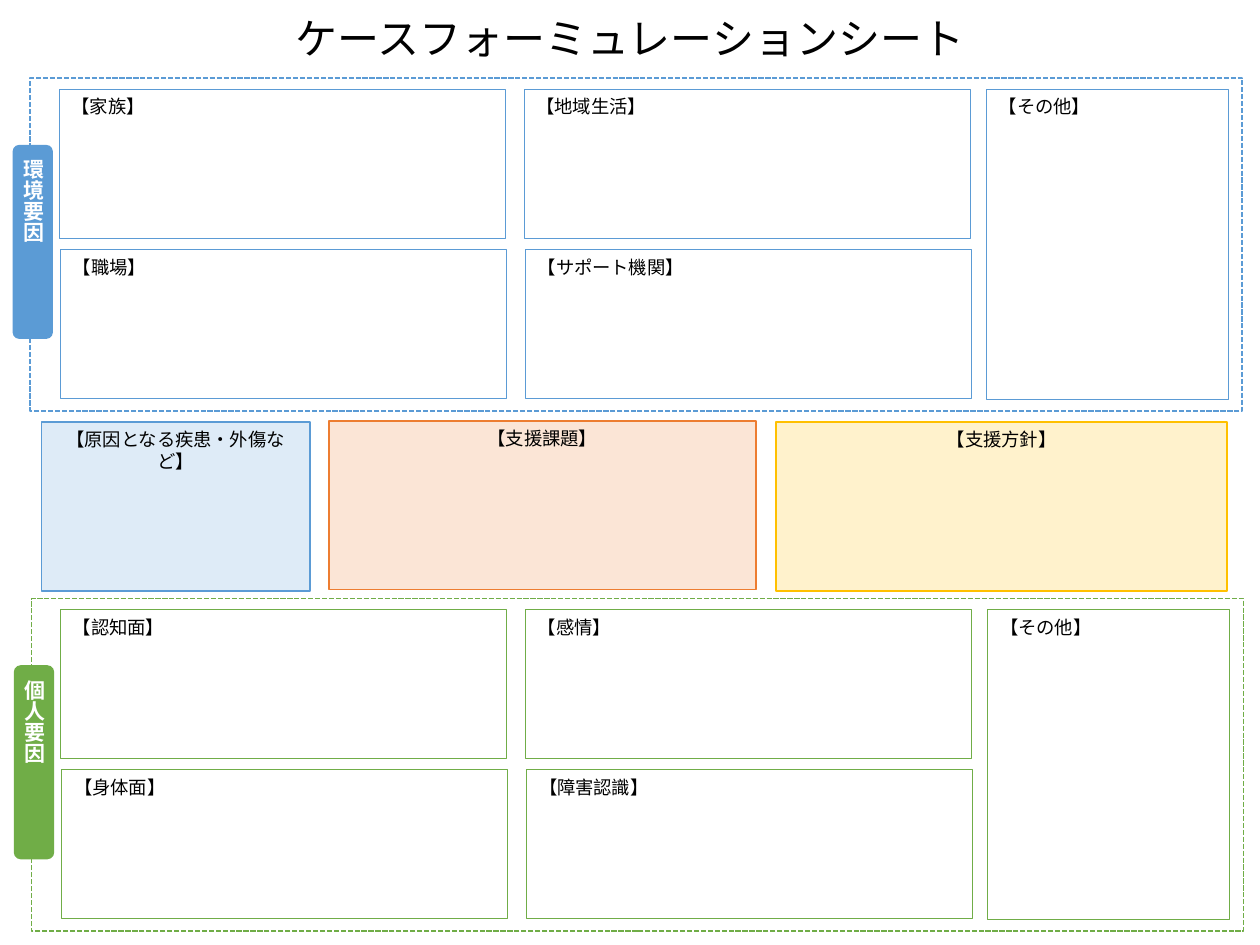
from pptx import Presentation
from pptx.dml.color import RGBColor
from pptx.enum.dml import MSO_LINE
from pptx.enum.shapes import MSO_SHAPE
from pptx.enum.text import MSO_ANCHOR, PP_ALIGN
from pptx.util import Inches, Pt

COLORS = {
    "black": "000000",
    "white": "FFFFFF",
    "blue": "5B9BD5",
    "green": "70AD47",
    "orange": "ED7D31",
    "gold": "FFC000",
    "pale_blue": "DEEBF7",
    "pale_orange": "FBE5D6",
    "pale_gold": "FFF2CC",
}


class Sheet:
    body_font = "Calibri"
    title_font = "Arial"

    def __init__(self, slide):
        self.slide = slide

    def color(self, name):
        return RGBColor.from_string(COLORS[name])

    def label(self, shape, text, size, font, color, align, bold=False):
        frame = shape.text_frame
        frame.word_wrap = True
        frame.text = text
        para = frame.paragraphs[0]
        para.alignment = align
        for span in para.runs:
            span.font.size = Pt(size)
            span.font.name = font
            span.font.bold = bold
            span.font.color.rgb = self.color(color)
        return frame

    def title(self, text, left, top, width, height):
        box = self.slide.shapes.add_textbox(
            Inches(left), Inches(top), Inches(width), Inches(height))
        frame = self.label(box, text, 24, self.title_font, "black", PP_ALIGN.CENTER)
        frame.vertical_anchor = MSO_ANCHOR.MIDDLE
        frame.paragraphs[0].line_spacing = 0.9

    def shape(self, kind, left, top, width, height, fill=None, line=None, weight=0.5):
        shape = self.slide.shapes.add_shape(
            kind, Inches(left), Inches(top), Inches(width), Inches(height))
        shape.shadow.inherit = False
        if fill:
            shape.fill.solid()
            shape.fill.fore_color.rgb = self.color(fill)
        else:
            shape.fill.background()
        if line:
            shape.line.color.rgb = self.color(line)
            shape.line.width = Pt(weight)
        else:
            shape.line.fill.background()
        return shape

    def field(self, text, left, top, width, height, line,
              fill=None, weight=0.5, align=PP_ALIGN.LEFT):
        box = self.shape(MSO_SHAPE.RECTANGLE, left, top, width, height, fill, line, weight)
        frame = self.label(box, text, 10.5, self.body_font, "black", align)
        frame.vertical_anchor = MSO_ANCHOR.TOP

    def border(self, left, top, width, height, line):
        box = self.shape(MSO_SHAPE.RECTANGLE, left, top, width, height, line=line, weight=1)
        box.line.dash_style = MSO_LINE.SQUARE_DOT

    def tab(self, text, left, top, width, height, fill):
        box = self.shape(MSO_SHAPE.ROUNDED_RECTANGLE, left, top, width, height, fill)
        frame = self.label(box, text, 12, self.body_font, "white", PP_ALIGN.JUSTIFY, True)
        frame.vertical_anchor = MSO_ANCHOR.MIDDLE
        frame._txBody.bodyPr.set("vert", "eaVert")

    def factor_panel(self, name, left, top, color, labels):
        for index, label in enumerate(labels):
            row, column = divmod(index, 2)
            self.field(label, left + 0.23 + 3.69 * column + 0.01 * row,
                       top + 0.09 + 1.27 * row, 3.54, 1.18, color)
        self.border(left, top, 9.62, 2.64, color)
        self.tab(name, left - 0.14, top + 0.53, 0.32, 1.54, color)
        self.field("【その他】", left + 7.59, top + 0.09, 1.92, 2.46, color)


def main():
    deck = Presentation()
    deck.slide_width = Inches(10)
    deck.slide_height = Inches(7.5)
    page = deck.slides.add_slide(deck.slide_layouts[6])
    sheet = Sheet(page)

    sheet.title("ケースフォーミュレーションシート", 0.5, 0, 9, 0.65)
    sheet.factor_panel("個人要因", 0.25, 4.75, "green",
                       ["【認知面】", "【感情】", "【身体面】", "【障害認識】"])
    summaries = [
        ("【支援課題】", 2.61, 3.34, 3.39, "orange", "pale_orange"),
        ("【原因となる疾患・外傷など】", 0.33, 3.35, 2.13, "blue", "pale_blue"),
        ("【支援方針】", 6.16, 3.35, 3.58, "gold", "pale_gold"),
    ]
    for label, left, top, width, line, fill in summaries:
        sheet.field(label, left, top, width, 1.34, line, fill, 1, PP_ALIGN.CENTER)
    sheet.factor_panel("環境要因", 0.24, 0.62, "blue",
                       ["【家族】", "【地域生活】", "【職場】", "【サポート機関】"])

    deck.save("out.pptx")


if __name__ == "__main__":
    main()
